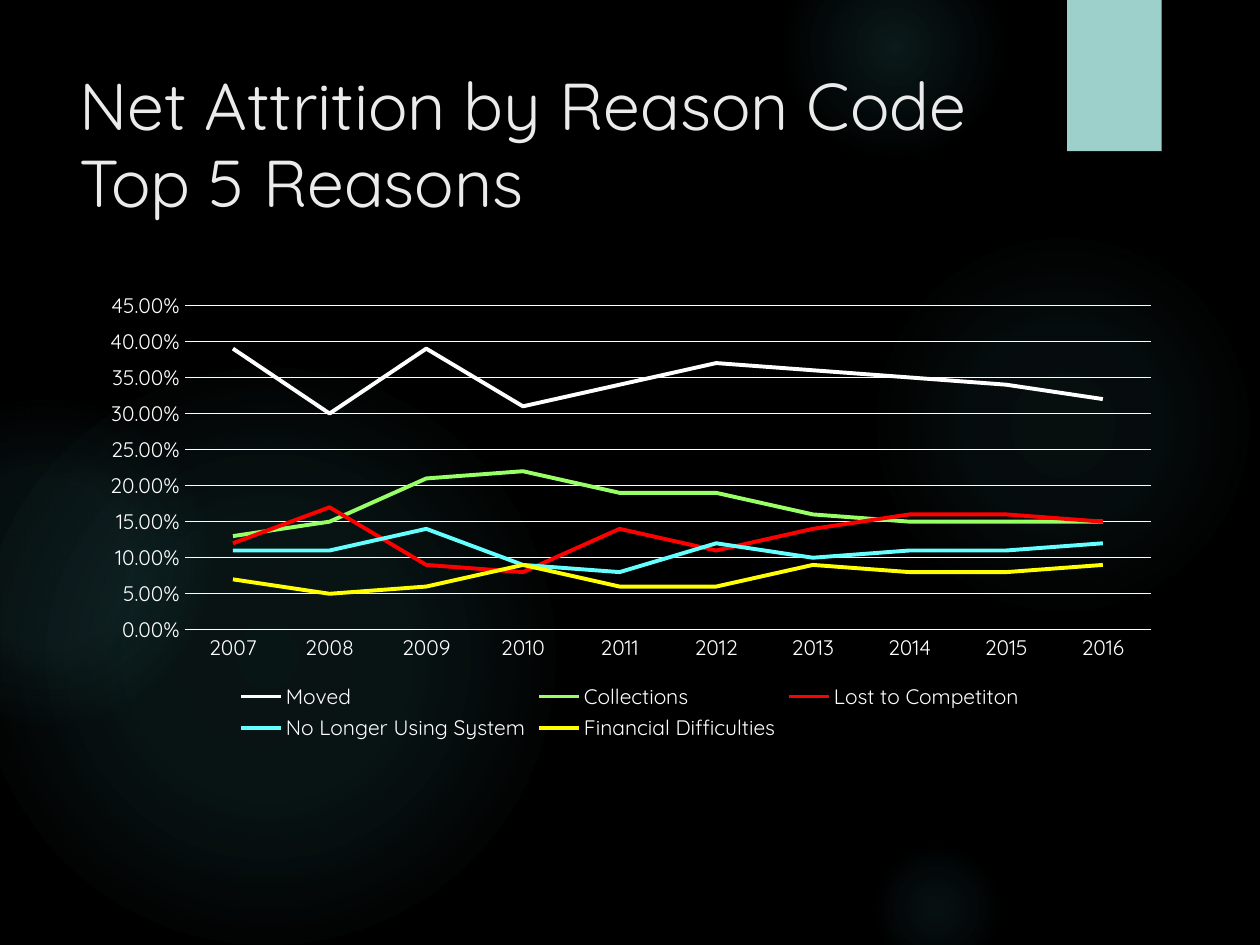
from dataclasses import dataclass

from lxml import etree
from pptx import Presentation
from pptx.chart.data import CategoryChartData
from pptx.dml.color import RGBColor
from pptx.enum.chart import XL_CHART_TYPE, XL_LEGEND_POSITION, XL_TICK_MARK
from pptx.enum.shapes import MSO_SHAPE
from pptx.enum.text import MSO_ANCHOR, MSO_AUTO_SIZE, PP_ALIGN
from pptx.oxml import parse_xml
from pptx.oxml.ns import nsdecls, qn
from pptx.util import Inches, Pt

LINE_CHART = XL_CHART_TYPE.LINE
LEGEND_BOTTOM = XL_LEGEND_POSITION.BOTTOM
NO_TICK = XL_TICK_MARK.NONE
OVAL = MSO_SHAPE.OVAL
RECTANGLE = MSO_SHAPE.RECTANGLE
ANCHOR_TOP = MSO_ANCHOR.TOP
NO_AUTOFIT = MSO_AUTO_SIZE.NONE
ALIGN_LEFT = PP_ALIGN.LEFT
TITLE_ONLY = 5


@dataclass(frozen=True)
class Theme:
    font: str = "Quicksand"
    background: str = "000000"
    glow: str = "50B9C1"
    tab: str = "9DD0CB"
    title: str = "EBEBEB"
    chart_text: str = "FFFFFF"
    title_size: float = 37.8
    chart_size: float = 12
    rule_width: float = 0.75
    series_width: float = 2.25


GLOWS = [
    (6.89, 1.83, 3.08, ((0, 7), (36, 6), (69, 0))),
    (6.22, -0.5, 1.75, ((0, 14), (36, 7), (73, 0))),
    (6.89, 6.67, 1.08, ((0, 9), (36, 5), (66, 0))),
    (-0.17, 2.92, 4.58, ((0, 11), (36, 10), (75, 0))),
    (-0.92, 3.17, 2.58, ((0, 8), (36, 8), (72, 0))),
]
YEARS = [str(year) for year in range(2007, 2017)]
REASONS = [
    ("Moved", "FFFFFF", (0.39, 0.3, 0.39, 0.31, 0.34, 0.37, 0.36, 0.35, 0.34, 0.32)),
    ("Collections", "99FF66", (0.13, 0.15, 0.21, 0.22, 0.19, 0.19, 0.16, 0.15, 0.15, 0.15)),
    ("Lost to Competiton", "FF0000", (0.12, 0.17, 0.09, 0.08, 0.14, 0.11, 0.14, 0.16, 0.16, 0.15)),
    ("No Longer Using System", "66FFFF", (0.11, 0.11, 0.14, 0.09, 0.08, 0.12, 0.1, 0.11, 0.11, 0.12)),
    ("Financial Difficulties", "FFFF00", (0.07, 0.05, 0.06, 0.09, 0.06, 0.06, 0.09, 0.08, 0.08, 0.09)),
]


class SlideBuilder:
    def __init__(self, slide, theme):
        self.slide = slide
        self.theme = theme

    def background(self):
        fill = self.slide.background.fill
        fill.solid()
        fill.fore_color.rgb = RGBColor.from_string(self.theme.background)

    def block(self, preset, left, top, width, height, color):
        block = self.slide.shapes.add_shape(
            preset, Inches(left), Inches(top), Inches(width), Inches(height))
        block.shadow.inherit = False
        block.fill.solid()
        block.fill.fore_color.rgb = RGBColor.from_string(color)
        block.line.fill.background()
        return block

    def glow(self, left, top, diameter, fade):
        color = self.theme.glow
        disc = self.block(OVAL, left, top, diameter, diameter, color)
        stops = "".join(
            f'<a:gs pos="{position * 1000}"><a:srgbClr val="{color}">'
            f'<a:alpha val="{opacity * 1000}"/></a:srgbClr></a:gs>'
            for position, opacity in fade)
        gradient = parse_xml(
            f'<a:gradFill {nsdecls("a")} rotWithShape="1"><a:gsLst>{stops}</a:gsLst>'
            '<a:path path="circle"><a:fillToRect l="50000" t="50000" r="50000" b="50000"/>'
            '</a:path></a:gradFill>')
        properties = disc._element.spPr
        properties.replace(properties.find(qn("a:solidFill")), gradient)

    def title(self, text, left, top, width, height):
        title = self.slide.shapes.title
        title.left, title.top = Inches(left), Inches(top)
        title.width, title.height = Inches(width), Inches(height)
        frame = title.text_frame
        frame.text = text
        frame.word_wrap = True
        frame.auto_size = NO_AUTOFIT
        frame.vertical_anchor = ANCHOR_TOP
        paragraph = frame.paragraphs[0]
        paragraph.alignment = ALIGN_LEFT
        paragraph.line_spacing = 0.97
        for run in paragraph.runs:
            self.style_font(run.font, self.theme.title_size, self.theme.title)
        self.slide.shapes._spTree.append(title._element)

    def style_font(self, font, size, color):
        font.name = self.theme.font
        font.size = Pt(size)
        font.bold = False
        font.color.rgb = RGBColor.from_string(color)

    def style_line(self, line, width, color):
        line.width = Pt(width)
        line.color.rgb = RGBColor.from_string(color)

    def line_chart(self, categories, series_rows, left, top, width, height, plot_box):
        theme = self.theme
        data = CategoryChartData(number_format="0.00%")
        data.categories = categories
        for name, _, values in series_rows:
            data.add_series(name, values)
        chart = self.slide.shapes.add_chart(
            LINE_CHART, Inches(left), Inches(top), Inches(width), Inches(height), data).chart
        chart.has_title = False
        self.style_font(chart.font, theme.chart_size, theme.chart_text)
        chart.has_legend = True
        chart.legend.position = LEGEND_BOTTOM
        chart.legend.include_in_layout = False
        self.style_font(chart.legend.font, theme.chart_size, theme.chart_text)

        for axis in (chart.category_axis, chart.value_axis):
            axis.major_tick_mark = axis.minor_tick_mark = NO_TICK
            self.style_font(axis.tick_labels.font, theme.chart_size, theme.chart_text)
        chart.category_axis.has_major_gridlines = False
        self.style_line(chart.category_axis.format.line, theme.rule_width, theme.chart_text)
        percent = chart.value_axis
        percent.minimum_scale, percent.maximum_scale, percent.major_unit = 0, 0.45, 0.05
        percent.tick_labels.number_format = "0.00%"
        percent.tick_labels.number_format_is_linked = False
        percent.has_major_gridlines = True
        self.style_line(percent.major_gridlines.format.line, theme.rule_width, theme.chart_text)
        percent.format.line.fill.background()

        plot = chart.plots[0]
        plot.vary_by_categories = False
        for series, (_, color, _) in zip(plot.series, series_rows):
            series.smooth = False
            self.style_line(series.format.line, theme.series_width, color)
        self.place_plot(chart, plot_box)

    def place_plot(self, chart, plot_box):
        area = chart._chartSpace.chart.plotArea
        for previous in area.findall(qn("c:layout")):
            area.remove(previous)
        layout = etree.Element(qn("c:layout"))
        manual = etree.SubElement(layout, qn("c:manualLayout"))
        settings = [("layoutTarget", "inner"), ("xMode", "edge"), ("yMode", "edge")]
        settings += zip("xywh", plot_box)
        for tag, value in settings:
            etree.SubElement(manual, qn(f"c:{tag}")).set("val", str(value))
        area.insert(0, layout)


def main():
    deck = Presentation()
    deck.slide_width, deck.slide_height = Inches(10), Inches(7.5)
    theme = Theme()
    builder = SlideBuilder(deck.slides.add_slide(deck.slide_layouts[TITLE_ONLY]), theme)
    builder.background()
    for left, top, diameter, fade in GLOWS:
        builder.glow(left, top, diameter, fade)
    builder.block(RECTANGLE, 8.47, 0, 0.75, 1.2, theme.tab)
    builder.title("Net Attrition by Reason Code\vTop 5 Reasons", 0.53, 0.5, 7.72, 1.53)
    builder.line_chart(YEARS, REASONS, 0.69, 2.24, 8.62, 3.68, (0.09, 0.05, 0.89, 0.7))
    deck.save("out.pptx")


if __name__ == "__main__":
    main()
